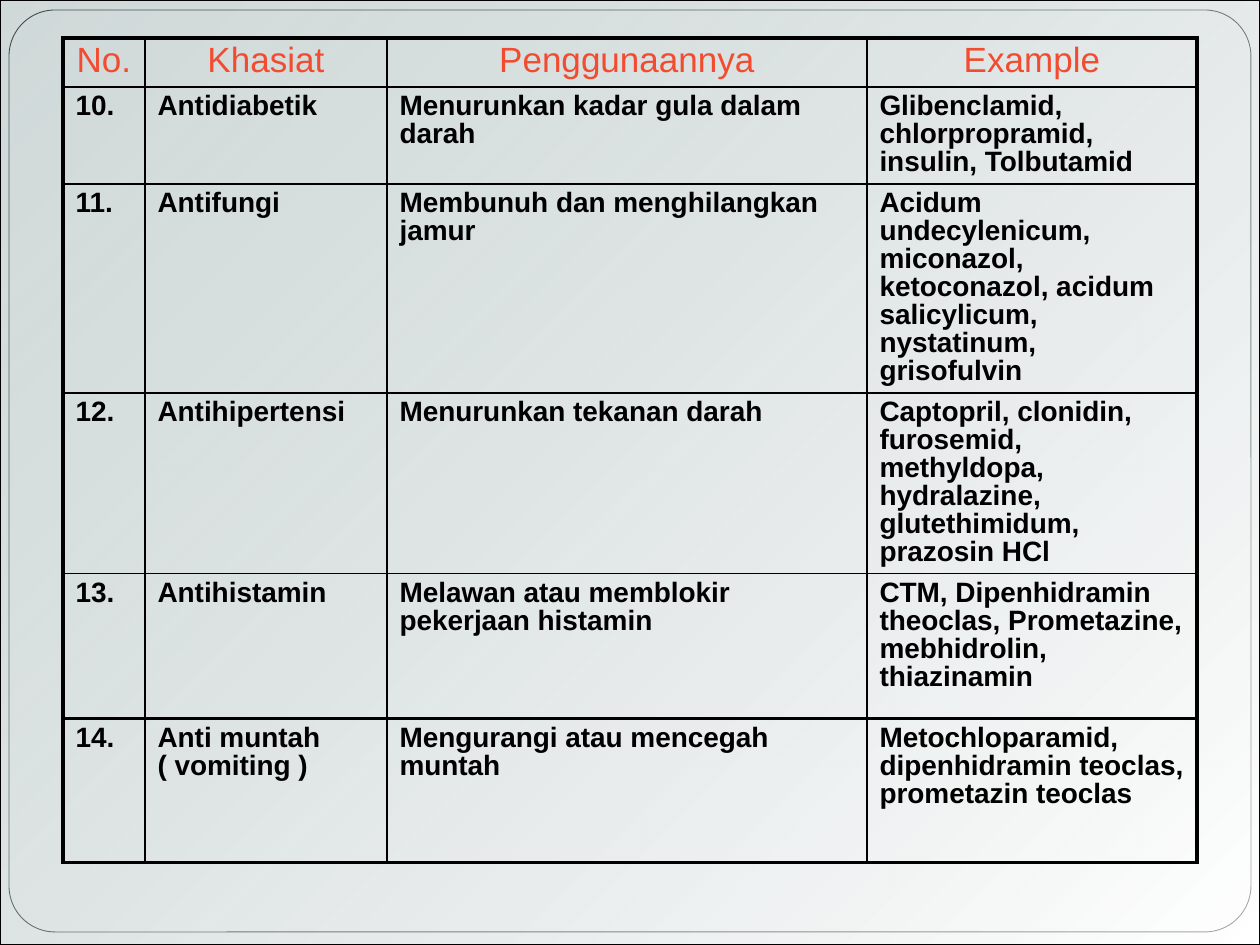
from lxml import etree
from pptx import Presentation
from pptx.dml.color import RGBColor
from pptx.enum import shapes, text
from pptx.oxml.ns import qn
from pptx.util import Emu, Pt

PX = 914400 // 126
COLORS = {"black": "000000", "white": "FFFFFF", "heading": "F24C30", "haze": "96A9A9"}
COLUMNS = [82, 242, 480, 330]
ROWS = [49, 97, 209, 180, 145, 144]
CELLS = [
    ["No.", "Khasiat", "Penggunaannya", "Example"],
    ["10.", "Antidiabetik", "Menurunkan kadar gula dalam darah",
     "Glibenclamid, chlorpropramid, insulin, Tolbutamid"],
    ["11.", "Antifungi", "Membunuh dan menghilangkan jamur",
     "Acidum undecylenicum, miconazol, ketoconazol, acidum salicylicum, nystatinum, grisofulvin"],
    ["12.", "Antihipertensi", "Menurunkan tekanan darah",
     "Captopril, clonidin, furosemid, methyldopa, hydralazine, glutethimidum, prazosin HCl"],
    ["13.", "Antihistamin", "Melawan atau memblokir pekerjaan histamin",
     "CTM, Dipenhidramin theoclas, Prometazine, mebhidrolin, thiazinamin"],
    ["14.", "Anti muntah ( vomiting )", "Mengurangi atau mencegah muntah",
     "Metochloparamid, dipenhidramin teoclas, prometazin teoclas"],
]


def rgb(name):
    return RGBColor.from_string(COLORS[name])


def set_borders(cell, widths):
    tc_pr = cell._tc.get_or_add_tcPr()
    for i, (side, width) in enumerate(widths.items()):
        ln = etree.Element(qn(f"a:ln{side}"), w=str(Pt(width)))
        fill = etree.SubElement(ln, qn("a:solidFill"))
        etree.SubElement(fill, qn("a:srgbClr"), val=COLORS["black"])
        tc_pr.insert(i, ln)


prs = Presentation()
prs.slide_width = Emu(1260 * PX)
prs.slide_height = Emu(945 * PX)
s = prs.slides.add_slide(prs.slide_layouts[6])

frame = s.shapes.add_shape(shapes.MSO_SHAPE.ROUNDED_RECTANGLE,
                           9 * PX, 10 * PX, 1242 * PX, 922 * PX)
frame.adjustments[0] = 0.05
frame.fill.solid()
frame.fill.fore_color.rgb = rgb("white")
frame.line.width = Pt(0.5)

veil = s.shapes.add_shape(shapes.MSO_SHAPE.RECTANGLE, 0, 0, prs.slide_width, prs.slide_height)
veil.fill.gradient()
veil.fill.gradient_angle = 315
for stop, name, position, alpha in zip(veil.fill.gradient_stops, ["haze", "white"], [0, 1], [44, 67]):
    stop.color.rgb = rgb(name)
    stop.position = position
    color = stop._gs.find(qn("a:srgbClr"))
    etree.SubElement(color, qn("a:alpha"), val=str(alpha * 1000))
veil.line.width = Pt(0.75)

for sp in (frame, veil):
    sp.shadow.inherit = False
    sp.line.color.rgb = rgb("black")

table = s.shapes.add_table(len(ROWS), len(COLUMNS), 63 * PX, 38 * PX,
                           sum(COLUMNS) * PX, sum(ROWS) * PX).table
table.first_row = False
table.horz_banding = False
for column, width in zip(table.columns, COLUMNS):
    column.width = Emu(width * PX)
for row, height in zip(table.rows, ROWS):
    row.height = Emu(height * PX)

last_row, last_col = len(ROWS) - 1, len(COLUMNS) - 1
for i, values in enumerate(CELLS):
    header = i == 0
    for j, value in enumerate(values):
        cell = table.cell(i, j)
        cell.fill.background()
        set_borders(cell, {
            "L": 2.25 if j == 0 else 1,
            "R": 2.25 if j == last_col else 1,
            "T": 2.25 if i in (0, last_row) else 1,
            "B": 2.25 if i >= last_row - 1 else 1,
        })
        cell.text_frame.text = value
        p = cell.text_frame.paragraphs[0]
        p.line_spacing = 0.9
        p.alignment = text.PP_ALIGN.CENTER if header else text.PP_ALIGN.LEFT
        font = p.runs[0].font
        font.name = "Arial"
        font.size = Pt(20 if header else 16)
        font.bold = not header
        font.color.rgb = rgb("heading" if header else "black")

prs.save("out.pptx")
